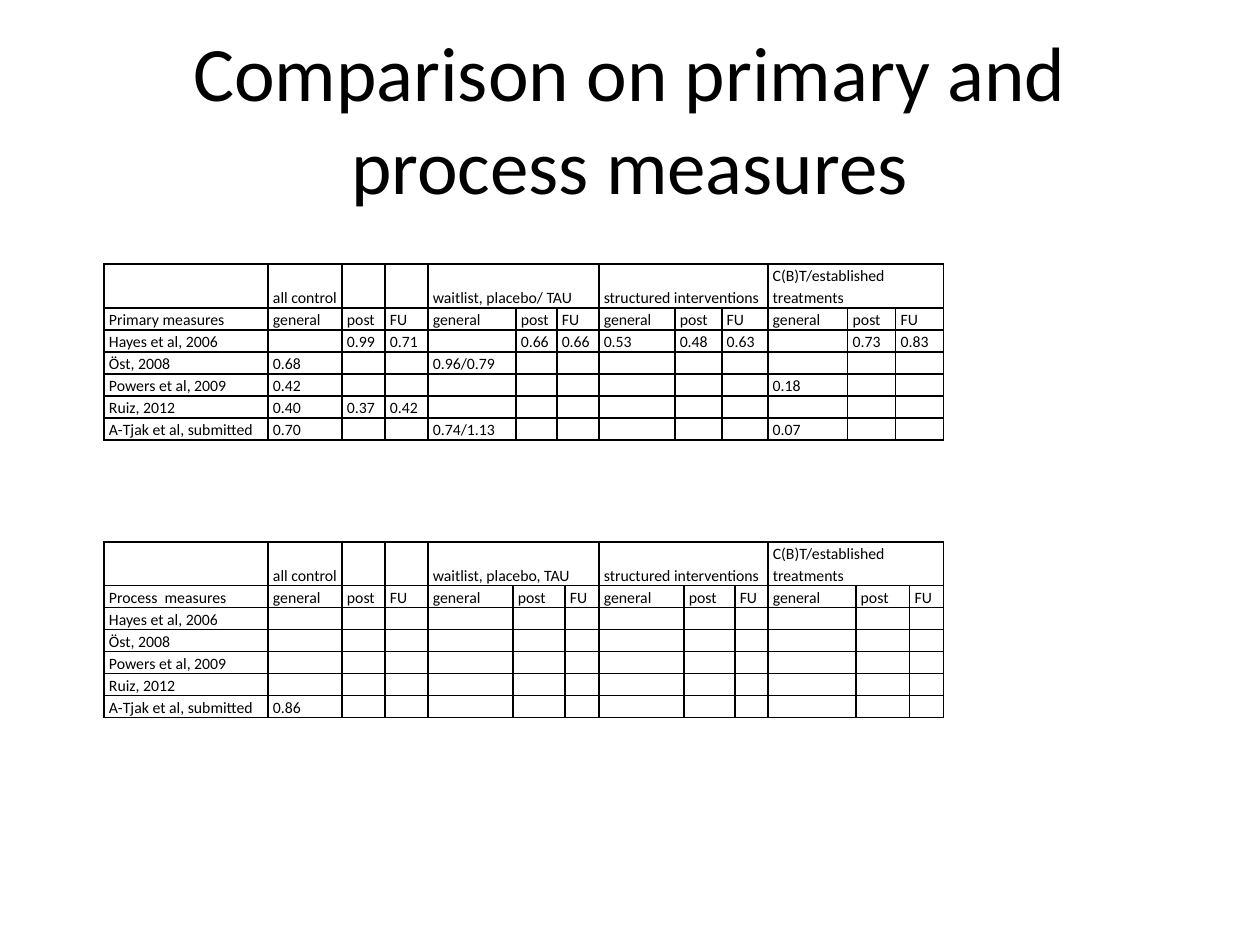
from dataclasses import dataclass

from lxml.etree import SubElement
from pptx import Presentation
from pptx.dml.color import RGBColor
from pptx.enum.text import MSO_ANCHOR, PP_ALIGN
from pptx.oxml.ns import qn
from pptx.util import Emu, Pt


@dataclass(frozen=True)
class Theme:
    """Hold the colours, font and type sizes of the slide."""
    ink: str = "000000"
    font: str = "Calibri"
    title: int = 44
    body: int = 9
    rule: int = 1
    lead: float = 1.15


THEME = Theme()
SCALE = 914400 / 126
LEFT = 104
STUB = [164, 74, 43, 43]
ROWS = [42] + [22] * 6
SPANS = (4, 7, 10)
STUDIES = ["Hayes et al, 2006", "Öst, 2008", "Powers et al, 2009",
           "Ruiz, 2012", "A-Tjak et al, submitted"]

PRIMARY = [
    ["", "0.99", "0.71", "", "0.66", "0.66", "0.53", "0.48", "0.63", "", "0.73", "0.83"],
    ["0.68", "", "", "0.96/0.79"],
    ["0.42", "", "", "", "", "", "", "", "", "0.18"],
    ["0.40", "0.37", "0.42"],
    ["0.70", "", "", "0.74/1.13", "", "", "", "", "", "0.07"],
]
PROCESS = [[], [], [], [], ["0.86"]]


def px(num):
    """Turn pixels into EMU."""
    return Emu(round(num * SCALE))


def add_run(para, text, size):
    """Add one styled run to a paragraph."""
    run = para.add_run()
    run.text = text
    run.font.name = THEME.font
    run.font.size = Pt(size)
    run.font.color.rgb = RGBColor.from_string(THEME.ink)


def add_title(slide, text):
    """Add the centred slide title."""
    box = slide.shapes.add_textbox(px(63), px(38), px(1134), px(158))
    frame = box.text_frame
    frame.word_wrap = True
    frame.vertical_anchor = MSO_ANCHOR.MIDDLE
    para = frame.paragraphs[0]
    para.alignment = PP_ALIGN.CENTER
    add_run(para, text, THEME.title)


def add_rules(cell):
    """Draw a thin line on all four sides of a cell."""
    props = cell._tc.get_or_add_tcPr()
    for side in ("lnL", "lnR", "lnT", "lnB"):
        line = SubElement(props, qn(f"a:{side}"), w=str(Pt(THEME.rule)))
        fill = SubElement(line, qn("a:solidFill"))
        SubElement(fill, qn("a:srgbClr"), val=THEME.ink)


def fill_cell(cell, text):
    """Style a cell and write its text."""
    cell.vertical_anchor = MSO_ANCHOR.BOTTOM
    cell.margin_left = cell.margin_right = px(5)
    cell.margin_top = cell.margin_bottom = 0
    add_rules(cell)
    cell.fill.background()
    para = cell.text_frame.paragraphs[0]
    para.line_spacing = THEME.lead
    if text:
        add_run(para, text, THEME.body)
    else:
        SubElement(para._p, qn("a:endParaRPr"), sz=str(THEME.body * 100))


def add_grid(slide, top, label, wait, cols, values):
    """Add one table of effect sizes per study and control group."""
    widths = STUB + cols
    groups = ["all control", wait, "structured interventions",
              "C(B)T/established treatments"]
    data = [
        [""] + [text for name in groups for text in (name, "", "")],
        [label] + ["general", "post", "FU"] * len(groups),
    ]
    data += [[name] + vals for name, vals in zip(STUDIES, values)]
    frame = slide.shapes.add_table(len(ROWS), len(widths), px(LEFT), px(top),
                                   px(sum(widths)), px(sum(ROWS)))
    table = frame.table
    table.first_row = table.horz_banding = False
    for col, width in zip(table.columns, widths):
        col.width = px(width)
    for row, height, texts in zip(table.rows, ROWS, data):
        row.height = px(height)
        texts = texts + [""] * (len(widths) - len(texts))
        for cell, text in zip(row.cells, texts):
            fill_cell(cell, text)
    for col in SPANS:
        table.cell(0, col).merge(table.cell(0, col + 2))


def main():
    """Build and save the slide."""
    deck = Presentation()
    deck.slide_width, deck.slide_height = px(1260), px(945)
    slide = deck.slides.add_slide(deck.slide_layouts[6])
    add_grid(slide, 264, "Primary measures", "waitlist, placebo/ TAU",
             [88, 41, 42, 76, 47, 46, 80, 48, 48], PRIMARY)
    add_title(slide, "Comparison on primary and process measures")
    add_grid(slide, 542, "Process  measures", "waitlist, placebo, TAU",
             [85, 52, 34, 85, 51, 33, 88, 54, 34], PROCESS)
    deck.save("out.pptx")


if __name__ == "__main__":
    main()
